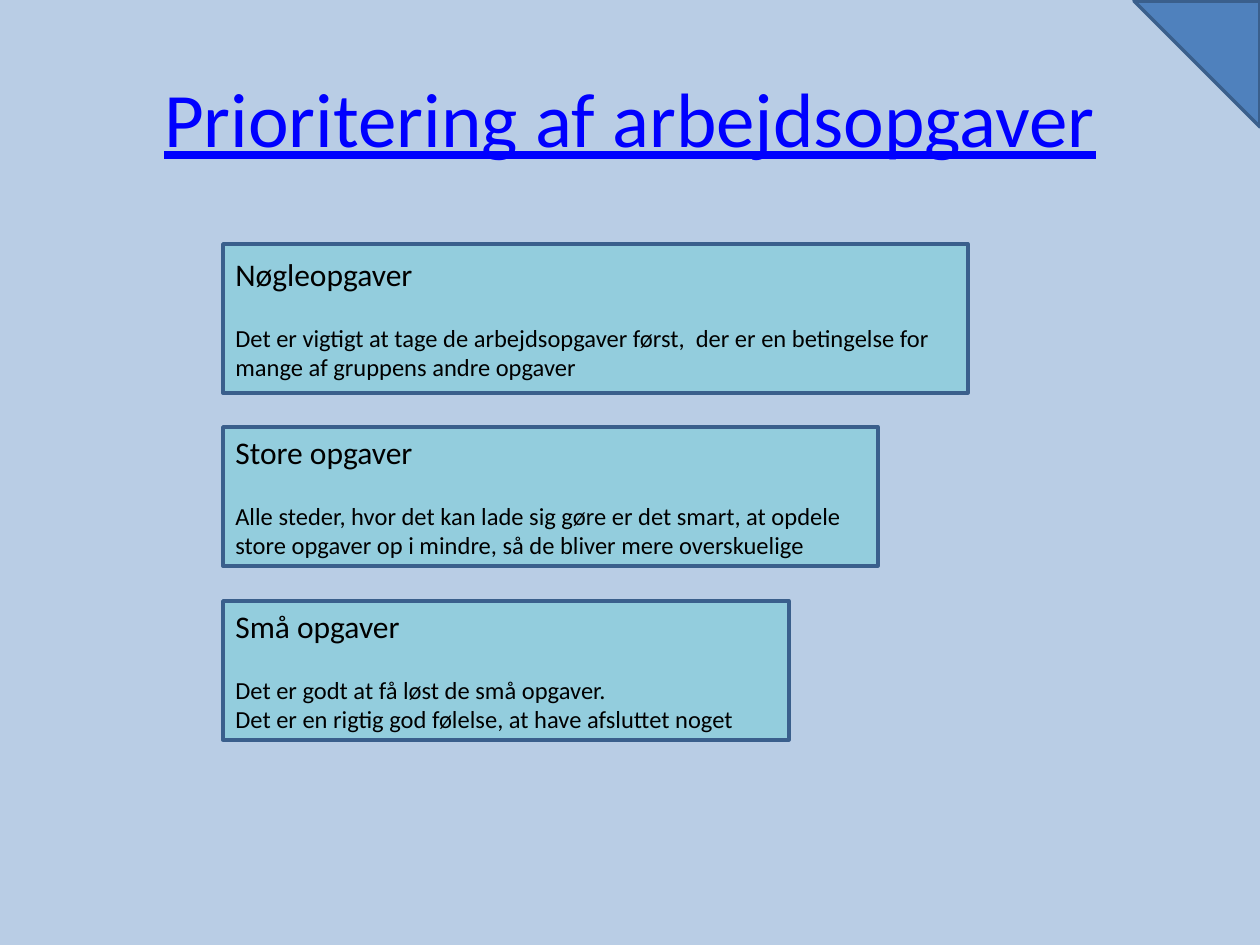
from pptx import Presentation
from pptx.dml.color import RGBColor
from pptx.enum.shapes import MSO_SHAPE
from pptx.enum.text import MSO_ANCHOR, PP_ALIGN
from pptx.util import Pt

PX = 914400 / 126
COLORS = {
    "background": "B9CDE5",
    "title": "0000FF",
    "text": "000000",
    "box": "93CDDD",
    "corner": "4F81BD",
    "outline": "3A5F8C",
}


def px(*lengths):
    return [round(length * PX) for length in lengths]


def write(paragraph, text, *, size, color="text", underline=None,
          align=PP_ALIGN.LEFT, before=0):
    paragraph.alignment = align
    paragraph.space_before = Pt(before)
    run = paragraph.add_run()
    run.text = text
    run.font.name = "Calibri"
    run.font.size = Pt(size)
    run.font.underline = underline
    run.font.color.rgb = RGBColor.from_string(COLORS[color])


presentation = Presentation()
presentation.slide_width, presentation.slide_height = px(1260, 945)
slide = presentation.slides.add_slide(presentation.slide_layouts[5])
slide.background.fill.solid()
slide.background.fill.fore_color.rgb = RGBColor.from_string(COLORS["background"])

# Title
title = slide.shapes.title
title.left, title.top, title.width, title.height = px(63, 38, 1134, 157)
title.text_frame.vertical_anchor = MSO_ANCHOR.MIDDLE
write(title.text_frame.paragraphs[0], "Prioritering af arbejdsopgaver",
      size=44, color="title", underline=True, align=PP_ALIGN.CENTER)

# Task boxes, narrowing by priority: top, width, height, heading, advice
tasks = [
    (244, 745, 149, "Nøgleopgaver",
     ["Det er vigtigt at tage de arbejdsopgaver først,  der er en betingelse for "
      "mange af gruppens andre opgaver"]),
    (427, 655, 139, "Store opgaver",
     ["Alle steder, hvor det kan lade sig gøre er det smart, at opdele store "
      "opgaver op i mindre, så de bliver mere overskuelige"]),
    (601, 566, 139, "Små opgaver",
     ["Det er godt at få løst de små opgaver.",
      "Det er en rigtig god følelse, at have afsluttet noget"]),
]
outlined = []
for top, width, height, heading, advice in tasks:
    task = slide.shapes.add_shape(MSO_SHAPE.RECTANGLE, *px(223, top, width, height))
    outlined.append((task, "box"))
    frame = task.text_frame
    frame.word_wrap = True
    frame.vertical_anchor = MSO_ANCHOR.MIDDLE
    write(frame.paragraphs[0], heading, size=18)
    for index, sentence in enumerate(advice):
        write(frame.add_paragraph(), sentence, size=14, before=0 if index else 17)

# Corner triangle
corner = slide.shapes.add_shape(MSO_SHAPE.RIGHT_TRIANGLE, *px(1134, 1, 126, 126))
corner.rotation = 180
outlined.append((corner, "corner"))

# Shared fill and outline
for shape, fill in outlined:
    shape.shadow.inherit = False
    shape.fill.solid()
    shape.fill.fore_color.rgb = RGBColor.from_string(COLORS[fill])
    shape.line.color.rgb = RGBColor.from_string(COLORS["outline"])
    shape.line.width = Pt(2)

presentation.save("out.pptx")
